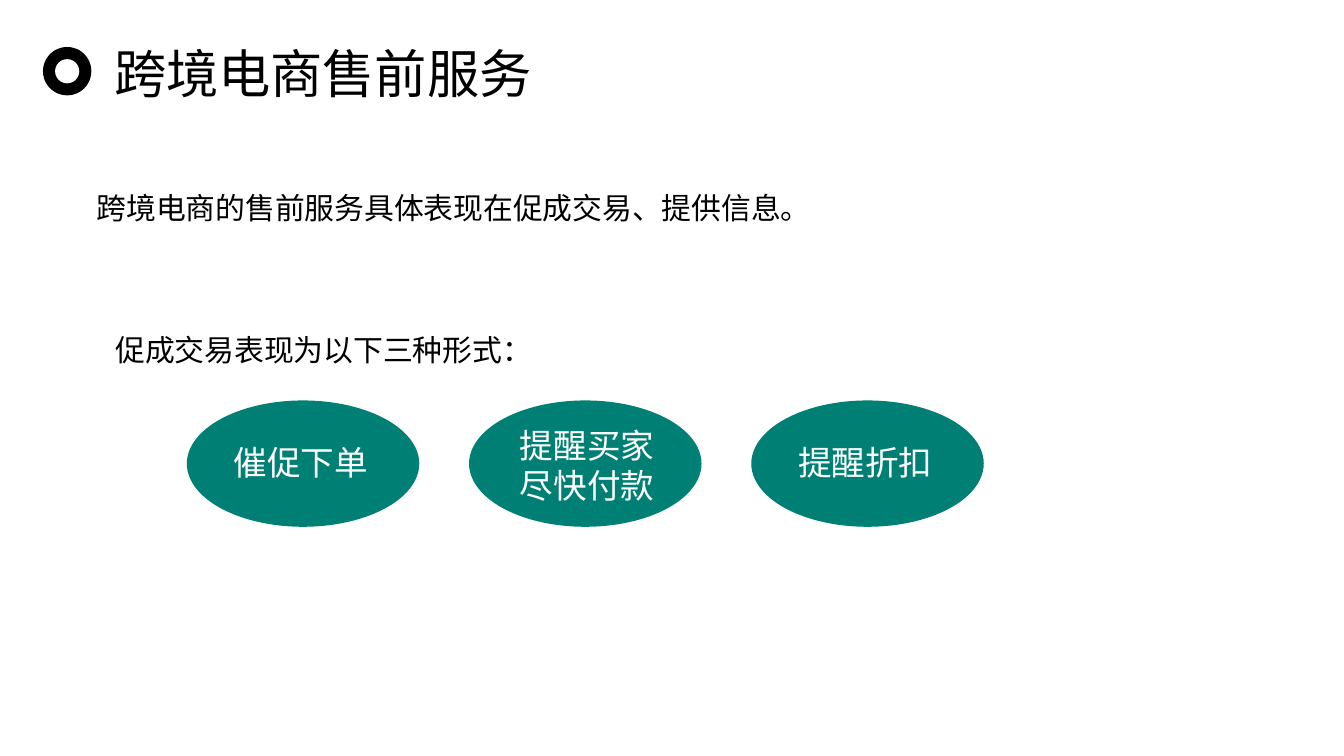
from lxml.etree import SubElement
from pptx import Presentation
from pptx.dml.color import RGBColor
from pptx.enum.shapes import MSO_SHAPE
from pptx.oxml.ns import qn
from pptx.util import Inches, Pt

BLACK = RGBColor(0x00, 0x00, 0x00)
WHITE = RGBColor(0xFF, 0xFF, 0xFF)
TEAL = RGBColor(0x00, 0x80, 0x75)
FONT = "Noto Sans CJK SC"

presentation = Presentation()
presentation.slide_width = Inches(10)
presentation.slide_height = Inches(10 * 9 / 16)
slide = presentation.slides.add_slide(presentation.slide_layouts[6])


def add_ellipse(left, top, width, height, color):
    shape = slide.shapes.add_shape(
        MSO_SHAPE.OVAL, Inches(left), Inches(top), Inches(width), Inches(height)
    )
    shape.shadow.inherit = False
    shape.fill.solid()
    shape.fill.fore_color.rgb = color
    shape.line.fill.background()


def add_text(left, top, width, height, text, size, color, spacing=None, wrap=True):
    box = slide.shapes.add_textbox(
        Inches(left), Inches(top), Inches(width), Inches(height)
    )
    box.text_frame.word_wrap = wrap
    paragraph = box.text_frame.paragraphs[0]
    paragraph.line_spacing = spacing
    run = paragraph.add_run()
    run.text = text
    run.font.size = Pt(size)
    run.font.color.rgb = color
    run.font.name = FONT
    SubElement(run.font._element, qn("a:ea"), typeface=FONT)


add_ellipse(0.32, 0.35, 0.36, 0.36, BLACK)
add_ellipse(0.41, 0.44, 0.18, 0.18, WHITE)
add_text(0.75, 0.26, 3.31, 0.57, "跨境电商售前服务", 28, BLACK, wrap=False)

add_text(0.62, 1.28, 6.48, 0.45, "跨境电商的售前服务具体表现在促成交易、提供信息。", 16, BLACK, 1.3)
add_text(0.76, 2.34, 3.32, 0.45, "促成交易表现为以下三种形式：", 16, BLACK, 1.3)

forms = [
    ("催促下单", 0.25, 3.24, 0.4),
    ("提醒买家尽快付款", 0.28, 3.11, 0.71),
    ("提醒折扣", 0.25, 3.24, 0.4),
]
for index, (label, inset, top, height) in enumerate(forms):
    left = 1.39 + index * 2.1
    add_ellipse(left, 2.98, 1.73, 0.94, TEAL)
    add_text(left + inset, top, 1.24, height, label, 18, WHITE)

presentation.save("out.pptx")
